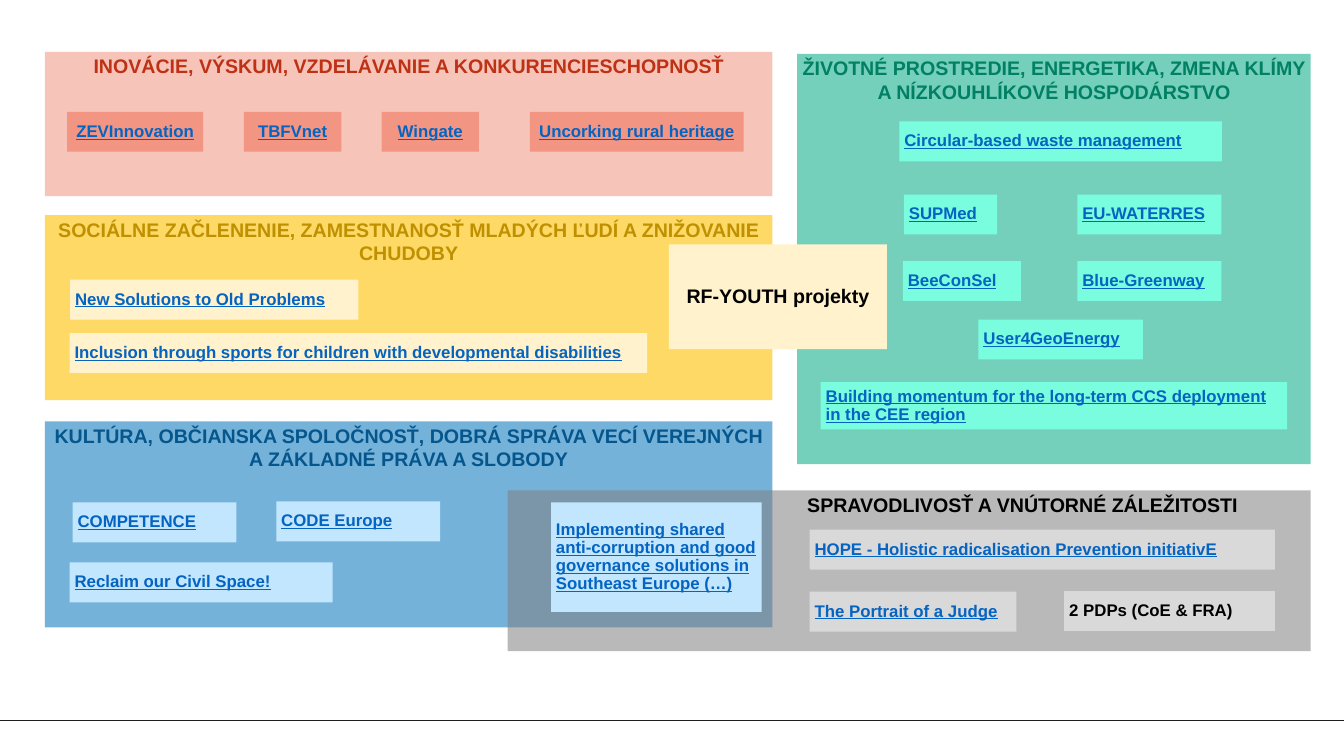
from lxml import etree
from pptx import Presentation
from pptx.dml.color import RGBColor
from pptx.enum.shapes import MSO_CONNECTOR, MSO_SHAPE
from pptx.enum.text import MSO_ANCHOR, PP_ALIGN
from pptx.oxml.ns import qn
from pptx.util import Inches, Pt

RECT = MSO_SHAPE.RECTANGLE
LINE = MSO_CONNECTOR.STRAIGHT
TOP, MID = MSO_ANCHOR.TOP, MSO_ANCHOR.MIDDLE
LEFT, CENTER = PP_ALIGN.LEFT, PP_ALIGN.CENTER

COLS, ROWS = 26.66, 15
CELL = Inches(1)
FLOOR = 14.29
CHIP = 0.79
INK, BLACK, LINK = "1D1E1C", "000000", "0563C1"
CREAM, ROSE, SKY, MINT, GREY = "FFF2CC", "F29582", "C1E6FD", "7AFDDF", "D9D9D9"

PANELS = [
    ("INOVÁCIE, VÝSKUM, VZDELÁVANIE A KONKURENCIESCHOPNOSŤ",
     (0.89, 1.03, 14.43, 2.86), ROSE, 55, "BD3114", 0.1),
    ("ŽIVOTNÉ PROSTREDIE, ENERGETIKA, ZMENA KLÍMY A NÍZKOUHLÍKOVÉ HOSPODÁRSTVO",
     (15.81, 1.07, 10.19, 8.14), "02AB84", 55, "018063", 0.1),
    ("SOCIÁLNE ZAČLENENIE, ZAMESTNANOSŤ MLADÝCH ĽUDÍ A ZNIŽOVANIE CHUDOBY",
     (0.89, 4.27, 14.43, 3.67), "FFC000", 60, "BF9000", 0.1),
    ("KULTÚRA, OBČIANSKA SPOLOČNOSŤ, DOBRÁ SPRÁVA VECÍ VEREJNÝCH "
     "A ZÁKLADNÉ PRÁVA A SLOBODY",
     (0.89, 8.36, 14.43, 4.09), "0573BA", 55, "04568C", 0.1),
    ("SPRAVODLIVOSŤ A VNÚTORNÉ ZÁLEŽITOSTI",
     (10.07, 9.73, 15.93, 3.19), "808080", 55, BLACK, 4.59),
]

CHIPS = {
    GREY: [
        ("The Portrait of a Judge", 16.06, 11.74, 4.1, CHIP),
        ("HOPE - Holistic radicalisation Prevention initiativE", 16.06, 10.51, 9.23, CHIP),
    ],
    SKY: [
        ("Implementing shared anti-corruption and good governance solutions "
         "in Southeast Europe (…)", 10.93, 9.97, 4.18, 2.17),
        ("Reclaim our Civil Space!", 1.38, 11.16, 5.22, CHIP),
        ("CODE Europe", 5.48, 9.95, 3.25, CHIP),
        ("COMPETENCE", 1.44, 9.97, 3.25, CHIP),
    ],
    CREAM: [
        ("Inclusion through sports for children with developmental disabilities",
         1.38, 6.61, 11.46, CHIP),
        ("New Solutions to Old Problems", 1.39, 5.55, 5.72, CHIP),
    ],
    ROSE: [
        ("ZEVInnovation", 1.33, 2.22, 2.7, CHIP),
        ("TBFVnet", 4.84, 2.22, 1.93, CHIP),
        ("Wingate", 7.57, 2.22, 1.93, CHIP),
        ("Uncorking rural heritage", 10.51, 2.22, 4.24, CHIP),
    ],
    MINT: [
        ("Circular-based waste management", 17.84, 2.41, 6.4, CHIP),
        ("User4GeoEnergy", 19.41, 6.34, 3.26, CHIP),
        ("Building momentum for the long-term CCS deployment in the CEE region",
         16.28, 7.58, 9.25, 0.94),
        ("EU-WATERRES", 21.37, 3.86, 2.86, CHIP),
        ("BeeConSel", 17.91, 5.18, 2.34, CHIP),
        ("Blue-Greenway", 21.37, 5.18, 2.86, CHIP),
        ("SUPMed", 17.93, 3.86, 1.85, CHIP),
    ],
}


def grid(*cells):
    return [round(cell * CELL) for cell in cells]


def tint(fmt, code):
    fmt.rgb = RGBColor.from_string(code)


def write(shape, text, size=24, color=LINK, align=LEFT, anchor=MID,
          under=False, space=0.9, inset=0.1):
    frame = shape.text_frame
    frame.word_wrap = True
    frame.vertical_anchor = anchor
    frame.margin_left = grid(inset)[0]
    para = frame.paragraphs[0]
    para.alignment = align
    para.line_spacing = space
    run = para.add_run()
    run.text = text
    font = run.font
    font.name, font.size, font.bold = "Arial", Pt(size), True
    if under:
        font.underline = True
    tint(font.color, color)


class Board:
    def __init__(self, slide):
        self.shapes = slide.shapes

    def block(self, place, color, alpha=100):
        shape = self.shapes.add_shape(RECT, *grid(*place))
        shape.shadow.inherit = False
        shape.line.fill.background()
        shape.fill.solid()
        tint(shape.fill.fore_color, color)
        if alpha < 100:
            code = shape._element.spPr.find(".//" + qn("a:srgbClr"))
            etree.SubElement(code, qn("a:alpha"), val=str(alpha * 1000))
        return shape

    def panel(self, text, place, fill, alpha, color, inset):
        write(self.block(place, fill, alpha), text, size=28, color=color,
              align=CENTER, anchor=TOP, space=1.0, inset=inset)

    def chip(self, text, place, fill, **style):
        write(self.block(place, fill), text, **style)

    def ground(self):
        line = self.shapes.add_connector(LINE, *grid(0, FLOOR, COLS, FLOOR))
        tint(line.line.color, INK)
        line.line.width = Pt(1.5)
        etree.SubElement(line._element.spPr, qn("a:effectLst"))


def main():
    deck = Presentation()
    deck.slide_width, deck.slide_height = grid(COLS, ROWS)
    board = Board(deck.slides.add_slide(deck.slide_layouts[6]))
    board.ground()
    for panel in PANELS:
        board.panel(*panel)
    board.chip("2 PDPs (CoE & FRA)", (21.11, 11.73, 4.18, CHIP), GREY, color=BLACK)
    board.chip("RF-YOUTH projekty", (13.27, 4.85, 4.32, 2.08), CREAM,
               size=28, color=BLACK, align=CENTER)
    for fill, chips in CHIPS.items():
        align = CENTER if fill == ROSE else LEFT
        for text, *place in chips:
            board.chip(text, place, fill, align=align, under=True)
    deck.save("out.pptx")


if __name__ == "__main__":
    main()
